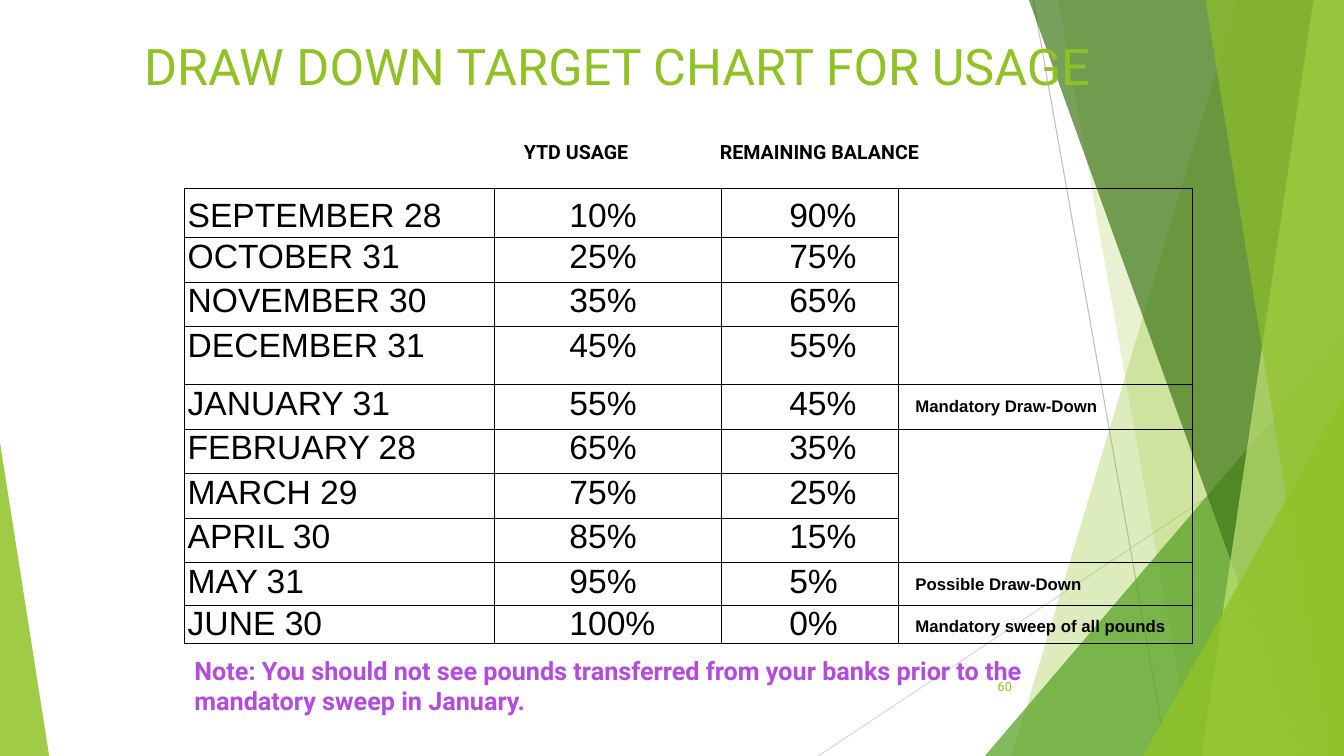
from dataclasses import dataclass

from lxml import etree
from pptx import Presentation
from pptx.dml.color import RGBColor
from pptx.enum.shapes import MSO_CONNECTOR, MSO_SHAPE
from pptx.enum.text import MSO_ANCHOR, PP_ALIGN
from pptx.oxml import parse_xml
from pptx.oxml.ns import nsdecls, qn
from pptx.util import Cm, Pt

LINE = MSO_CONNECTOR.STRAIGHT
TRIANGLE = MSO_SHAPE.ISOSCELES_TRIANGLE
TOP, MIDDLE, BOTTOM = MSO_ANCHOR.TOP, MSO_ANCHOR.MIDDLE, MSO_ANCHOR.BOTTOM
LEFT, RIGHT = PP_ALIGN.LEFT, PP_ALIGN.RIGHT

GREEN = RGBColor(0x90, 0xC2, 0x26)
MID_GREEN = RGBColor(0x54, 0xA0, 0x21)
DARK_GREEN = RGBColor(0x3F, 0x78, 0x19)
PALE_GREEN = RGBColor(0xC0, 0xE4, 0x74)
GRAY = RGBColor(0xBF, 0xBF, 0xBF)
LIGHT_GRAY = RGBColor(0xD9, 0xD9, 0xD9)
BLACK = RGBColor(0, 0, 0)
PURPLE = RGBColor(0xB3, 0x4B, 0xDD)

SLIDE_W, SLIDE_H = 33.87, 19.05


@dataclass
class Ray:
    start: tuple[float, float]
    end: tuple[float, float]
    color: RGBColor


@dataclass
class Band:
    """Area from a slanted left edge to the right side of the slide."""
    top_x: float
    bottom_x: float
    color: RGBColor
    opacity: int


@dataclass
class Corner:
    """Right triangle standing on the bottom of the slide."""
    left: float
    top: float
    width: float
    apex: float
    color: RGBColor
    opacity: int


@dataclass
class Caption:
    text: str
    box: tuple[float, float, float, float]
    size: float
    color: RGBColor
    bold: bool = False
    anchor: MSO_ANCHOR = TOP
    align: PP_ALIGN = LEFT
    tabs: tuple[float, ...] = ()


@dataclass
class Target:
    date: str
    used: int
    height: float = 1.12
    action: str = ""


RAYS = [
    Ray((26.04, 0), (29.41, SLIDE_H), GRAY),
    Ray((SLIDE_W, 10.24), (20.62, SLIDE_H), LIGHT_GRAY),
]
FACETS = [
    Band(31.19, 25.5, GREEN, 30),
    Band(26.67, 30.05, GREEN, 20),
    Corner(24.82, 8.46, 9.05, 1, MID_GREEN, 72),
    Band(25.93, 32.79, DARK_GREEN, 70),
    Band(33.1, 30.28, PALE_GREEN, 70),
    Band(30.38, 33.48, GREEN, 65),
    Corner(28.8, 9.98, 5.07, 1, GREEN, 80),
    Corner(0, 11.15, 1.24, 0, GREEN, 85),
]
TITLE = Caption("DRAW DOWN TARGET CHART FOR USAGE", (3.38, 0.76, 28.78, 2.41), 36, GREEN)
CAPTIONS = [
    Caption("\tYTD USAGE\tREMAINING BALANCE", (10.59, 3.23, 17.3, 1.02), 14, BLACK,
            bold=True, anchor=BOTTOM, tabs=(2.36, 7.3)),
    Caption("Note: You should not see pounds transferred from your banks prior to the "
            "mandatory sweep in January.", (4.65, 16.38, 22.3, 1.8), 18, PURPLE, bold=True),
    Caption("60", (23.85, 16.79, 1.9, 1.02), 9, GREEN, anchor=MIDDLE, align=RIGHT),
]
TARGETS = [
    Target("SEPTEMBER 28", 10, height=1.22),
    Target("OCTOBER 31", 25),
    Target("NOVEMBER 30", 35),
    Target("DECEMBER 31", 45, height=1.47),
    Target("JANUARY 31", 55, action="Mandatory Draw-Down"),
    Target("FEBRUARY 28", 65),
    Target("MARCH 29", 75),
    Target("APRIL 30", 85),
    Target("MAY 31", 95, height=1.07, action="Possible Draw-Down"),
    Target("JUNE 30", 100, height=0.96, action="Mandatory sweep of all pounds"),
]
COLUMN_WIDTHS = (7.82, 5.72, 4.45, 7.42)
INDENTS = (0.08, 1.88, 1.7, 0.43)
ACTION_COLUMN = 3
MERGED_ROWS = ((0, 3), (5, 7))


def draw_ray(slide, ray: Ray) -> None:
    points = [Cm(value) for value in (*ray.start, *ray.end)]
    connector = slide.shapes.add_connector(LINE, *points)
    connector.line.color.rgb = ray.color
    connector.line.width = Pt(0.75)
    etree.SubElement(connector._element.spPr, qn("a:effectLst"))


def draw_facet(slide, facet: Band | Corner) -> None:
    if isinstance(facet, Band):
        outline = slide.shapes.build_freeform(Cm(facet.top_x), 0)
        outline.add_line_segments([(Cm(SLIDE_W), 0), (Cm(SLIDE_W), Cm(SLIDE_H)),
                                   (Cm(facet.bottom_x), Cm(SLIDE_H))])
        shape = outline.convert_to_shape()
    else:
        shape = slide.shapes.add_shape(TRIANGLE, Cm(facet.left), Cm(facet.top),
                                       Cm(facet.width), Cm(SLIDE_H - facet.top))
        shape.adjustments[0] = facet.apex
    shape.shadow.inherit = False
    shape.line.fill.background()
    shape.fill.solid()
    shape.fill.fore_color.rgb = facet.color
    color = shape._element.spPr.find(qn("a:solidFill"))[0]
    etree.SubElement(color, qn("a:alpha")).set("val", str(facet.opacity * 1000))


def draw_caption(slide, caption: Caption) -> None:
    frame = slide.shapes.add_textbox(*map(Cm, caption.box)).text_frame
    frame.word_wrap = True
    frame.vertical_anchor = caption.anchor
    paragraph = frame.paragraphs[0]
    paragraph.add_run().text = caption.text
    paragraph.alignment = caption.align
    if caption.tabs:
        stops = etree.SubElement(paragraph._p.get_or_add_pPr(), qn("a:tabLst"))
        for position in caption.tabs:
            etree.SubElement(stops, qn("a:tab"), pos=str(Cm(position)), algn="l")
    set_font(paragraph, "Roboto", caption.size, caption.color, caption.bold)


def set_font(paragraph, name: str, size: float, color: RGBColor, bold: bool) -> None:
    font = paragraph.font
    font.name, font.size, font.bold = name, Pt(size), bold
    font.color.rgb = color


def add_borders(cell) -> None:
    properties = cell._tc.get_or_add_tcPr()
    for index, side in enumerate("LRTB"):
        properties.insert(index, parse_xml(
            f'<a:ln{side} {nsdecls("a")} w="12700"><a:solidFill>'
            f'<a:srgbClr val="{BLACK}"/></a:solidFill></a:ln{side}>'))


def draw_targets(slide) -> None:
    frame = slide.shapes.add_table(
        len(TARGETS), len(COLUMN_WIDTHS), Cm(4.65), Cm(4.75),
        Cm(sum(COLUMN_WIDTHS)), Cm(sum(target.height for target in TARGETS)))
    table = frame.table
    table.first_row = table.horz_banding = False
    for column, width in zip(table.columns, COLUMN_WIDTHS):
        column.width = Cm(width)
    for row, target in enumerate(TARGETS):
        table.rows[row].height = Cm(target.height)
        texts = (target.date, f"{target.used}%", f"{100 - target.used}%", target.action)
        for column, text in enumerate(texts):
            cell = table.cell(row, column)
            cell.fill.background()
            add_borders(cell)
            cell.margin_left = Cm(INDENTS[column])
            cell.margin_right = cell.margin_top = cell.margin_bottom = 0
            if not text:
                continue
            is_action = column == ACTION_COLUMN
            if is_action:
                cell.margin_top = Cm(0.24)
            elif row == 0:
                cell.margin_top = Cm(0.07)
            paragraph = cell.text_frame.paragraphs[0]
            paragraph.add_run().text = text
            paragraph.line_spacing = 1.15 if is_action or row == 0 else Pt(26.9)
            set_font(paragraph, "Arial", 12 if is_action else 24, BLACK, is_action)
    for first, last in MERGED_ROWS:
        table.cell(first, ACTION_COLUMN).merge(table.cell(last, ACTION_COLUMN))


def main() -> None:
    presentation = Presentation()
    presentation.slide_width, presentation.slide_height = Cm(SLIDE_W), Cm(SLIDE_H)
    slide = presentation.slides.add_slide(presentation.slide_layouts[6])
    # Background facets
    for ray in RAYS:
        draw_ray(slide, ray)
    for facet in FACETS:
        draw_facet(slide, facet)
    # Title, target table and captions
    draw_caption(slide, TITLE)
    draw_targets(slide)
    for caption in CAPTIONS:
        draw_caption(slide, caption)
    presentation.save("out.pptx")


if __name__ == "__main__":
    main()
